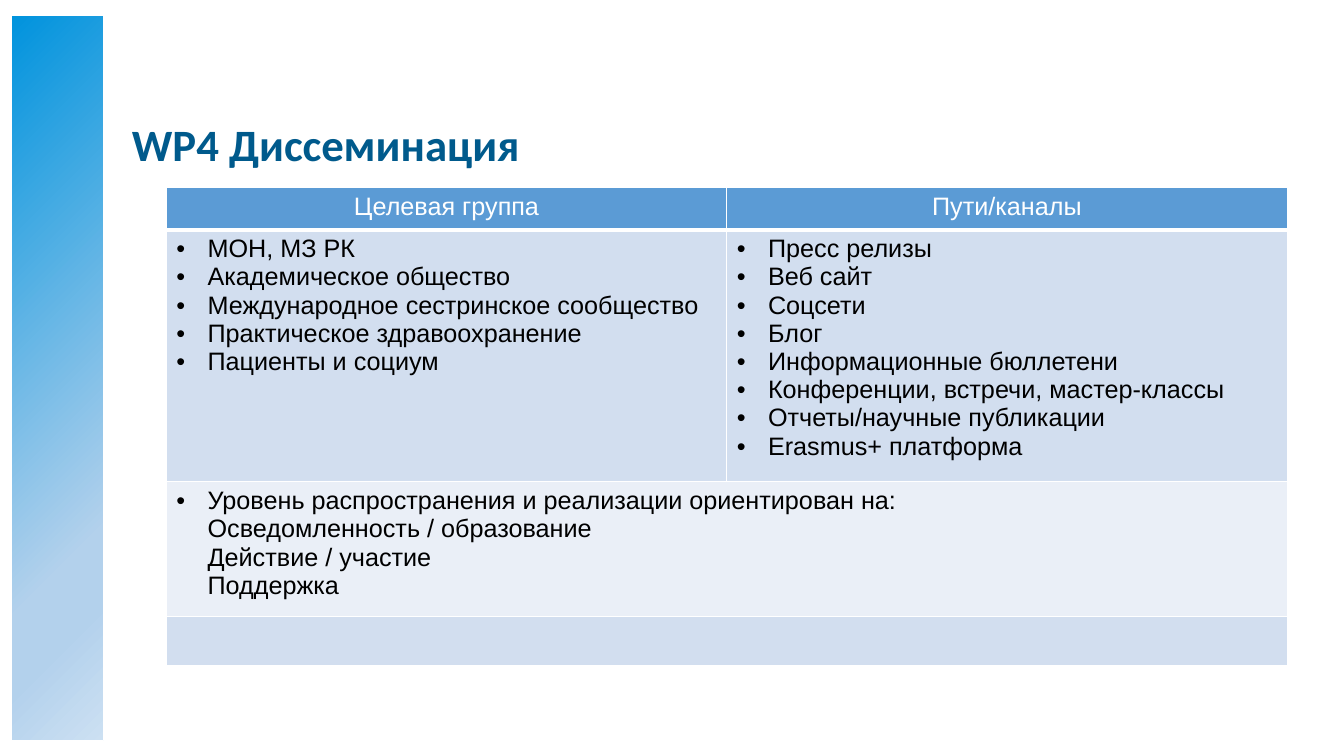
"""Build the WP4 dissemination slide: gradient side bar, title and table."""
from lxml.etree import SubElement
from pptx import Presentation
from pptx.dml.color import RGBColor
from pptx.enum.shapes import MSO_SHAPE as SHAPE
from pptx.enum.text import MSO_ANCHOR as ANCHOR, PP_ALIGN as ALIGN
from pptx.oxml.ns import qn
from pptx.util import Emu, Inches, Pt

TITLE = "WP4 Диссеминация"
HEADERS = ["Целевая группа", "Пути/каналы"]
GROUPS = ["МОН, МЗ РК", "Академическое общество", "Международное сестринское сообщество",
          "Практическое здравоохранение", "Пациенты и социум"]
CHANNELS = ["Пресс релизы", "Веб сайт", "Соцсети", "Блог", "Информационные бюллетени",
            "Конференции, встречи, мастер-классы", "Отчеты/научные публикации",
            "Erasmus+ платформа"]
LEVELS = ["Уровень распространения и реализации ориентирован на:\n"
          "Осведомленность / образование\nДействие / участие\nПоддержка"]
ROWS = [(0.42, "header", [HEADERS[:1], HEADERS[1:]]),
        (2.26, "band", [GROUPS, CHANNELS]),
        (1.34, "pale", [LEVELS]),
        (0.48, "band", [[]])]
COLORS = {"title": "005A8C", "header": "5B9BD5", "band": "D2DEEF", "pale": "EAEFF7",
          "white": "FFFFFF", "black": "000000"}
BAR_STOPS = [(0, "0093DD"), (74, "B3D1EC"), (83, "B3D1EC"), (100, "CCE0F2")]
COL_WIDTH, INDENT = 5.56, 0.31


def rgb(name):
    return RGBColor.from_string(COLORS[name])


def add_bar(s):
    bar = s.shapes.add_shape(SHAPE.RECTANGLE, Inches(0.11), Inches(0.15), Inches(0.92), Inches(7.2))
    bar.shadow.inherit = False
    bar.fill.gradient()
    bar.fill.gradient_angle = 315
    stops = bar._element.spPr.find(".//" + qn("a:gsLst"))
    for stop in list(stops):
        stops.remove(stop)
    for share, color in BAR_STOPS:
        stop = SubElement(stops, qn("a:gs"), pos=str(share * 1000))
        SubElement(stop, qn("a:srgbClr"), val=color)
    bar.line.color.rgb = rgb("white")
    bar.line.width = Pt(1)


def add_run(p, text, font, size, color, bold=False):
    r = p.add_run()
    r.text = text
    r.font.name, r.font.size, r.font.bold = font, Pt(size), bold
    r.font.color.rgb = rgb(color)


def add_title(s):
    tf = s.shapes.add_textbox(Inches(1.21), Inches(0.95), Inches(11.75), Inches(1.02)).text_frame
    tf.word_wrap, tf.vertical_anchor = True, ANCHOR.MIDDLE
    tf.margin_left = tf.margin_right = tf.margin_top = tf.margin_bottom = Inches(0.1)
    p = tf.paragraphs[0]
    p.line_spacing = 0.9
    add_run(p, TITLE, "Calibri", 32, "title", True)


def add_bullet(p):
    pPr = p._p.get_or_add_pPr()
    pPr.set("marL", str(Inches(INDENT)))
    pPr.set("indent", str(-Inches(INDENT)))
    SubElement(pPr, qn("a:buFont"), typeface="Arial")
    SubElement(pPr, qn("a:buChar"), char="•")


def style_cell(cell, kind):
    tcPr = cell._tc.get_or_add_tcPr()
    for side in "LRTB":
        width = 3 if kind == "header" and side == "B" else 1
        ln = SubElement(tcPr, qn("a:ln" + side), w=str(Pt(width)))
        SubElement(SubElement(ln, qn("a:solidFill")), qn("a:srgbClr"), val=COLORS["white"])
    cell.fill.solid()
    cell.fill.fore_color.rgb = rgb(kind)


def fill_cell(cell, items, kind):
    tf = cell.text_frame
    for i, item in enumerate(items):
        p = tf.add_paragraph() if i else tf.paragraphs[0]
        if kind == "header":
            p.alignment = ALIGN.CENTER
        else:
            add_bullet(p)
        for j, line in enumerate(item.split("\n")):
            if j:
                p.add_line_break()
            add_run(p, line, "Arial", 18, "white" if kind == "header" else "black")


def add_table(s):
    height = sum(row[0] for row in ROWS)
    table = s.shapes.add_table(len(ROWS), 2, Inches(1.65), Inches(1.86),
                               Inches(2 * COL_WIDTH), Inches(height)).table
    for col in table.columns:
        col.width = Inches(COL_WIDTH)
    for i, (row_height, kind, texts) in enumerate(ROWS):
        table.rows[i].height = Inches(row_height)
        for cell in table.rows[i].cells:
            style_cell(cell, kind)
        if len(texts) == 1:
            table.cell(i, 0).merge(table.cell(i, 1))
        for j, items in enumerate(texts):
            fill_cell(table.cell(i, j), items, kind)


def main():
    prs = Presentation()
    prs.slide_width, prs.slide_height = Emu(12192000), Inches(7.5)
    s = prs.slides.add_slide(prs.slide_layouts[6])
    add_bar(s)
    add_title(s)
    add_table(s)
    prs.save("out.pptx")


if __name__ == "__main__":
    main()
